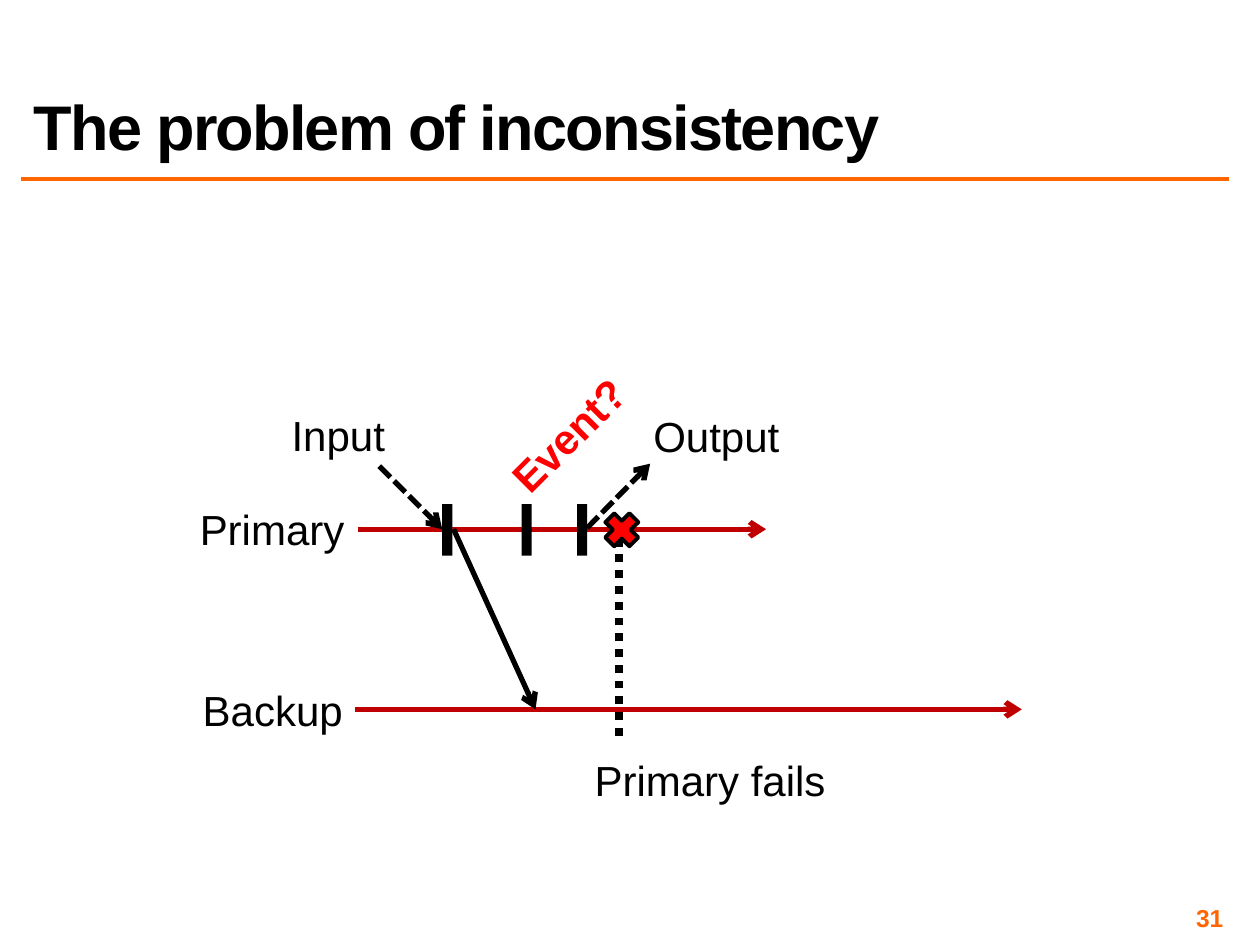
from pptx import Presentation
from pptx.dml.color import RGBColor
from pptx.enum.dml import MSO_LINE
from pptx.enum.shapes import MSO_CONNECTOR, MSO_SHAPE
from pptx.enum.text import MSO_ANCHOR, MSO_AUTO_SIZE, PP_ALIGN
from pptx.oxml.ns import qn
from pptx.util import Inches, Pt
from lxml.etree import SubElement

COLORS = {"black": "000000", "orange": "FF6600", "dark_red": "C00000", "red": "FF0000"}
PRIMARY_Y, BACKUP_Y = 4.2, 5.63
TICK_WIDTH, TICK_HEIGHT = 0.08, 0.41


def rgb(name):
    return RGBColor.from_string(COLORS[name])


def add_text(page, text, left, top, width, height, size=24, color="black",
             bold=False, align=PP_ALIGN.CENTER, anchor=MSO_ANCHOR.TOP):
    box = page.shapes.add_textbox(Inches(left), Inches(top), Inches(width), Inches(height))
    frame = box.text_frame
    frame.word_wrap = True
    frame.vertical_anchor = anchor
    para = frame.paragraphs[0]
    para.alignment = align
    span = para.add_run()
    span.text = text
    span.font.name = "Arial"
    span.font.size = Pt(size)
    span.font.bold = bold
    span.font.color.rgb = rgb(color)
    return box


def add_label(page, text, left, top, width, **style):
    box = add_text(page, text, left, top, width, 0.5, **style)
    box.text_frame.word_wrap = False
    box.text_frame.auto_size = MSO_AUTO_SIZE.SHAPE_TO_FIT_TEXT
    return box


def add_title(page, text):
    box = add_text(page, text, 0.17, 0.17, 9.58, 1.17, size=36, bold=True,
                   align=PP_ALIGN.LEFT, anchor=MSO_ANCHOR.BOTTOM)
    para = box.text_frame.paragraphs[0]
    para.line_spacing = 0.8
    para.runs[0].font._element.set("spc", "-100")


def add_page_number(page, number):
    box = add_text(page, number, 7.42, 7.17, 2.33, 0.23, size=14, color="orange",
                   bold=True, align=PP_ALIGN.RIGHT, anchor=MSO_ANCHOR.MIDDLE)
    frame = box.text_frame
    frame.margin_left = frame.margin_right = Inches(0.04)
    frame.margin_top = frame.margin_bottom = Inches(0.04)


def add_line(page, start, end, color="black", width=3, dash=None, arrow=True):
    points = [Inches(value) for value in (*start, *end)]
    connector = page.shapes.add_connector(MSO_CONNECTOR.STRAIGHT, *points)
    line = connector.line
    line.color.rgb = rgb(color)
    line.width = Pt(width)
    if dash:
        line.dash_style = dash
    if arrow:
        SubElement(line._get_or_add_ln(), qn("a:tailEnd"), type="arrow")
    SubElement(connector._element.spPr, qn("a:effectLst"))


def add_solid(page, kind, left, top, width, height, color):
    shape = page.shapes.add_shape(kind, Inches(left), Inches(top), Inches(width), Inches(height))
    shape.shadow.inherit = False
    shape.fill.solid()
    shape.fill.fore_color.rgb = rgb(color)
    shape.line.fill.background()
    return shape


def add_tick(page, left):
    add_solid(page, MSO_SHAPE.RECTANGLE, left, 4, TICK_WIDTH, TICK_HEIGHT, "black")


def add_failure_cross(page):
    cross = add_solid(page, MSO_SHAPE.CROSS, 4.8, 4.07, 0.27, 0.27, "red")
    cross.adjustments[0] = 0.315
    cross.rotation = 45
    cross.line.color.rgb = rgb("black")
    cross.line.width = Pt(2.25)


def main():
    deck = Presentation()
    deck.slide_width, deck.slide_height = Inches(10), Inches(7.5)
    page = deck.slides.add_slide(deck.slide_layouts[6])

    add_line(page, (0.17, 1.42), (9.75, 1.42), "orange", 2, arrow=False)
    add_page_number(page, "31")
    add_title(page, "The problem of inconsistency")

    add_label(page, "Primary", 1.48, 3.95, 1.36)
    add_label(page, "Backup", 1.5, 5.38, 1.33)
    add_line(page, (2.84, PRIMARY_Y), (6.08, PRIMARY_Y), "dark_red")
    add_line(page, (2.82, BACKUP_Y), (8.11, BACKUP_Y), "dark_red")

    add_label(page, "Input", 2.21, 3.2, 0.95)
    add_label(page, "Output", 5.08, 3.21, 1.21)
    add_line(page, (3.01, 3.7), (3.51, PRIMARY_Y), dash=MSO_LINE.SQUARE_DOT)
    add_line(page, (4.66, 4.19), (5.16, 3.68), dash=MSO_LINE.SQUARE_DOT)
    add_line(page, (4.91, 5.84), (4.91, PRIMARY_Y), width=4.5,
             dash=MSO_LINE.ROUND_DOT, arrow=False)
    add_line(page, (3.6, PRIMARY_Y), (4.25, BACKUP_Y))
    for left in (3.51, 4.14, 4.58):
        add_tick(page, left)

    add_label(page, "Primary fails", 4.62, 5.94, 2.05, align=PP_ALIGN.LEFT)
    event = add_label(page, "Event?", 3.85, 3.2, 1.32, color="red", bold=True)
    event.rotation = 315
    add_failure_cross(page)

    deck.save("out.pptx")


if __name__ == "__main__":
    main()
